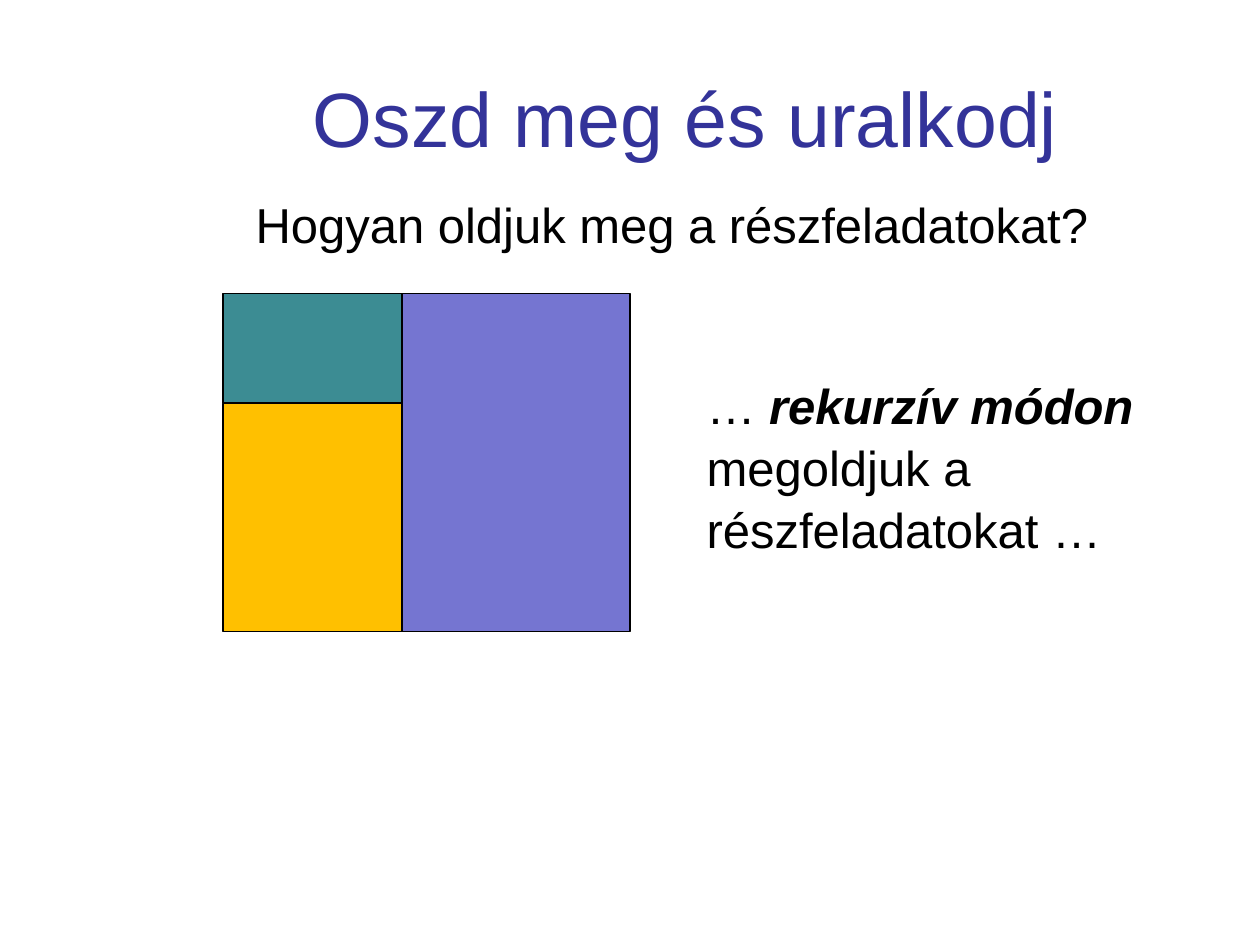
from pptx import Presentation, util as u
from pptx.dml.color import RGBColor
from pptx.enum import shapes, text

deck = Presentation()
deck.slide_width, deck.slide_height = u.Inches(10), u.Inches(7.5)
slide = deck.slides.add_slide(deck.slide_layouts[5])


def paint(target, colour):
    if hasattr(target, "solid"):
        target.solid()
        target.fore_color.rgb = RGBColor.from_string(colour)
    else:
        target.color.rgb = RGBColor.from_string(colour)


def write(paragraph, words, size, colour, emphasis=False):
    run = paragraph.add_run()
    run.text = words
    run.font.name = "Arial"
    run.font.size = u.Pt(size)
    run.font.bold = run.font.italic = emphasis
    paint(run.font, colour)


title = slide.shapes.title
title.left, title.top = u.Inches(1.38), u.Inches(0.3)
title.width, title.height = u.Inches(8.12), u.Inches(1.25)
title.text_frame.vertical_anchor = text.MSO_ANCHOR.MIDDLE
heading = title.text_frame.paragraphs[0]
heading.alignment = text.PP_ALIGN.CENTER
write(heading, "Oszd meg és uralkodj", 44, "333399")

columns = [1.77, 3.19, 5]
rows = [2.33, 3.2, 5.01]
subproblems = [
    (0, 1, 0, 1, "3C8C93"),
    (1, 2, 0, 2, "7575D1"),
    (0, 1, 1, 2, "FFC000"),
]
for left, right, top, bottom, colour in subproblems:
    subproblem = slide.shapes.add_shape(
        shapes.MSO_SHAPE.RECTANGLE,
        u.Inches(columns[left]), u.Inches(rows[top]),
        u.Inches(columns[right] - columns[left]),
        u.Inches(rows[bottom] - rows[top]))
    subproblem.shadow.inherit = False
    paint(subproblem.fill, colour)
    paint(subproblem.line, "000000")
    subproblem.line.width = u.Pt(0.75)

statements = [
    (5.51, 2.91, 4.37, 1.51, [
        ("… ", False),
        ("rekurzív módon ", True),
        ("megoldjuk a részfeladatokat …", False),
    ]),
    (1.93, 1.47, 7.16, 0.57, [("Hogyan oldjuk meg a részfeladatokat?", False)]),
]
for left, top, width, height, parts in statements:
    statement = slide.shapes.add_textbox(
        u.Inches(left), u.Inches(top), u.Inches(width), u.Inches(height))
    statement.text_frame.word_wrap = True
    statement.text_frame.auto_size = text.MSO_AUTO_SIZE.SHAPE_TO_FIT_TEXT
    sentence = statement.text_frame.paragraphs[0]
    sentence.line_spacing = 1.05
    for words, emphasis in parts:
        write(sentence, words, 28, "000000", emphasis)

deck.save("out.pptx")
